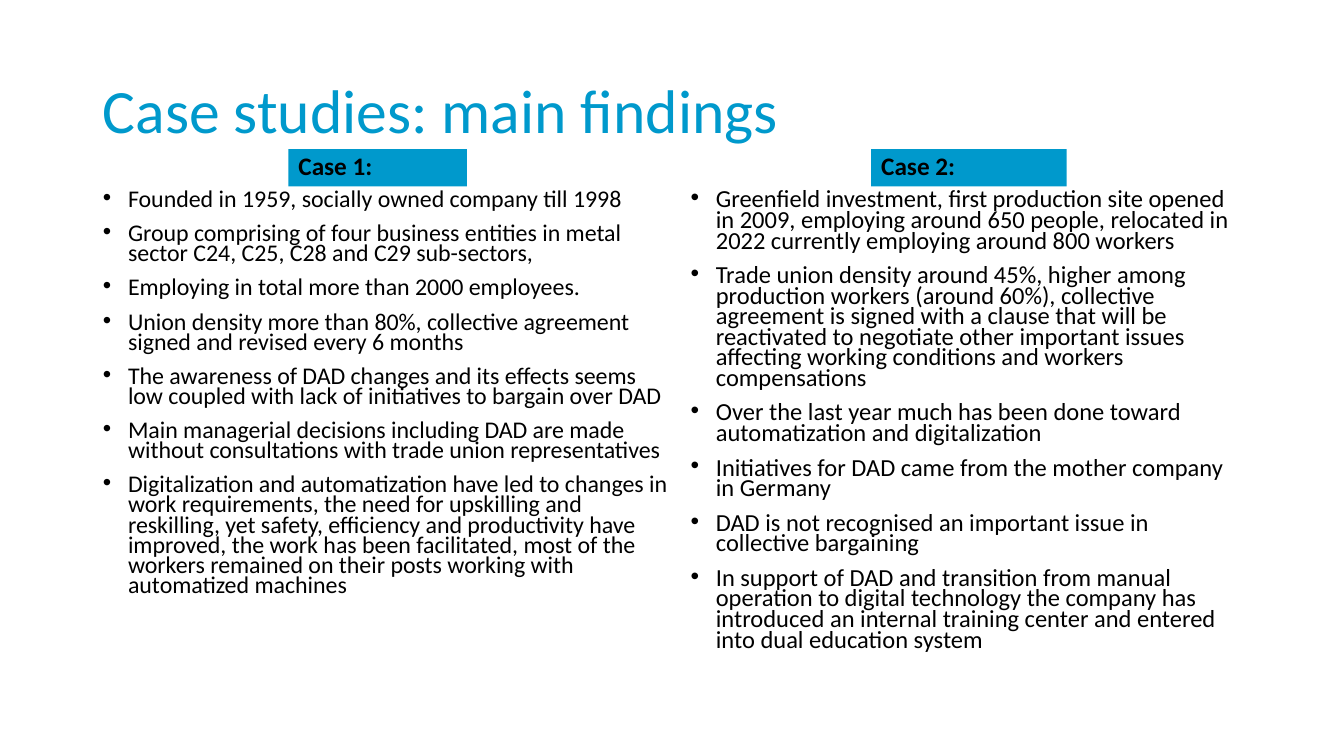
from dataclasses import dataclass

import pptx
import pptx.dml.color
import pptx.enum.text
import pptx.oxml
import pptx.oxml.ns
import pptx.util
from pptx.util import Inches


@dataclass(frozen=True)
class Theme:
    font: str = "Calibri"
    accent: str = "0099CC"
    text: str = "000000"
    title_size: float = 44
    label_size: float = 18


THEME = Theme()
ANCHOR = pptx.enum.text.MSO_ANCHOR

CASE_1 = [
    "Founded in 1959, socially owned company till 1998",
    "Group comprising of four business entities in metal sector C24, C25, C28 and C29 sub-sectors,",
    "Employing in total more than 2000 employees.",
    "Union density more than 80%, collective agreement signed and revised every 6 months",
    "The awareness of DAD changes and its effects seems low coupled with lack of initiatives "
    "to bargain over DAD",
    "Main managerial decisions including DAD are made without consultations with trade union "
    "representatives",
    "Digitalization and automatization have led to changes in work requirements, the need for "
    "upskilling and reskilling, yet safety, efficiency and productivity have improved, the work "
    "has been facilitated, most of the workers remained on their posts working with automatized "
    "machines",
]
CASE_2 = [
    "Greenfield investment, first production site opened in 2009, employing around 650 people, "
    "relocated in 2022 currently employing around 800 workers",
    "Trade union density around 45%, higher among production workers (around 60%), collective "
    "agreement is signed with a clause that will be reactivated to negotiate other important "
    "issues affecting working conditions and workers compensations",
    "Over the last year much has been done toward automatization and digitalization",
    "Initiatives for DAD came from the mother company in Germany",
    "DAD is not recognised an important issue in collective bargaining",
    "In support of DAD and transition from manual operation to digital technology the company "
    "has introduced an internal training center and entered into dual education system",
]


def rgb(value):
    return pptx.dml.color.RGBColor.from_string(value)


def place(sp, left, top, width, height):
    sp.left, sp.top = Inches(left), Inches(top)
    sp.width, sp.height = Inches(width), Inches(height)


def set_bullet(p, indent):
    pPr = p._p.get_or_add_pPr()
    pPr.set("marL", str(Inches(indent)))
    pPr.set("indent", str(-Inches(indent)))
    ns = pptx.oxml.ns.nsdecls("a")
    pPr.append(pptx.oxml.parse_xml(f'<a:buFont {ns} typeface="Arial"/>'))
    pPr.append(pptx.oxml.parse_xml(f'<a:buChar {ns} char="•"/>'))


def fill_text(sp, lines, size, color, anchor, bold=False, spacing=0.9, before=0, bullets=False):
    tf = sp.text_frame
    tf.word_wrap = True
    tf.auto_size = pptx.enum.text.MSO_AUTO_SIZE.NONE
    tf.vertical_anchor = anchor
    for i, line in enumerate(lines):
        p = tf.add_paragraph() if i else tf.paragraphs[0]
        p.alignment = pptx.enum.text.PP_ALIGN.LEFT
        p.line_spacing = spacing
        p.space_before = pptx.util.Pt(before)
        if bullets:
            set_bullet(p, 0.25)
        r = p.add_run()
        r.text = line
        r.font.name = THEME.font
        r.font.size = pptx.util.Pt(size)
        r.font.bold = bold
        r.font.color.rgb = rgb(color)


def add_title(s, text, left, top, width, height):
    sp = s.shapes.title
    place(sp, left, top, width, height)
    fill_text(sp, [text], THEME.title_size, THEME.accent, ANCHOR.MIDDLE)


def add_case(label, body, name, findings, size, box, label_offset, label_width):
    """Put a coloured label along the top of the box and the findings below it."""
    left, top, width, height = box
    label_height = 0.37
    place(label, left + label_offset, top, label_width, label_height)
    label.fill.solid()
    label.fill.fore_color.rgb = rgb(THEME.accent)
    fill_text(label, [name], THEME.label_size, THEME.text, ANCHOR.BOTTOM, bold=True, before=10)
    place(body, left, top + label_height, width, height - label_height)
    fill_text(body, findings, size, THEME.text, ANCHOR.TOP, spacing=0.7, before=10, bullets=True)


def main():
    prs = pptx.Presentation()
    prs.slide_width, prs.slide_height = Inches(13.33), Inches(7.5)
    s = prs.slides.add_slide(prs.slide_layouts.get_by_name("Comparison"))
    ph = s.placeholders
    add_title(s, "Case studies: main findings", 0.92, 0.4, 11.5, 1.45)
    add_case(ph[1], ph[2], "Case 1:", CASE_1, 17.1, (0.92, 1.48, 5.83, 5.29), 1.94, 1.77)
    add_case(ph[3], ph[4], "Case 2:", CASE_2, 17.5, (6.75, 1.48, 5.67, 5.29), 1.89, 1.94)
    prs.save("out.pptx")


if __name__ == "__main__":
    main()
